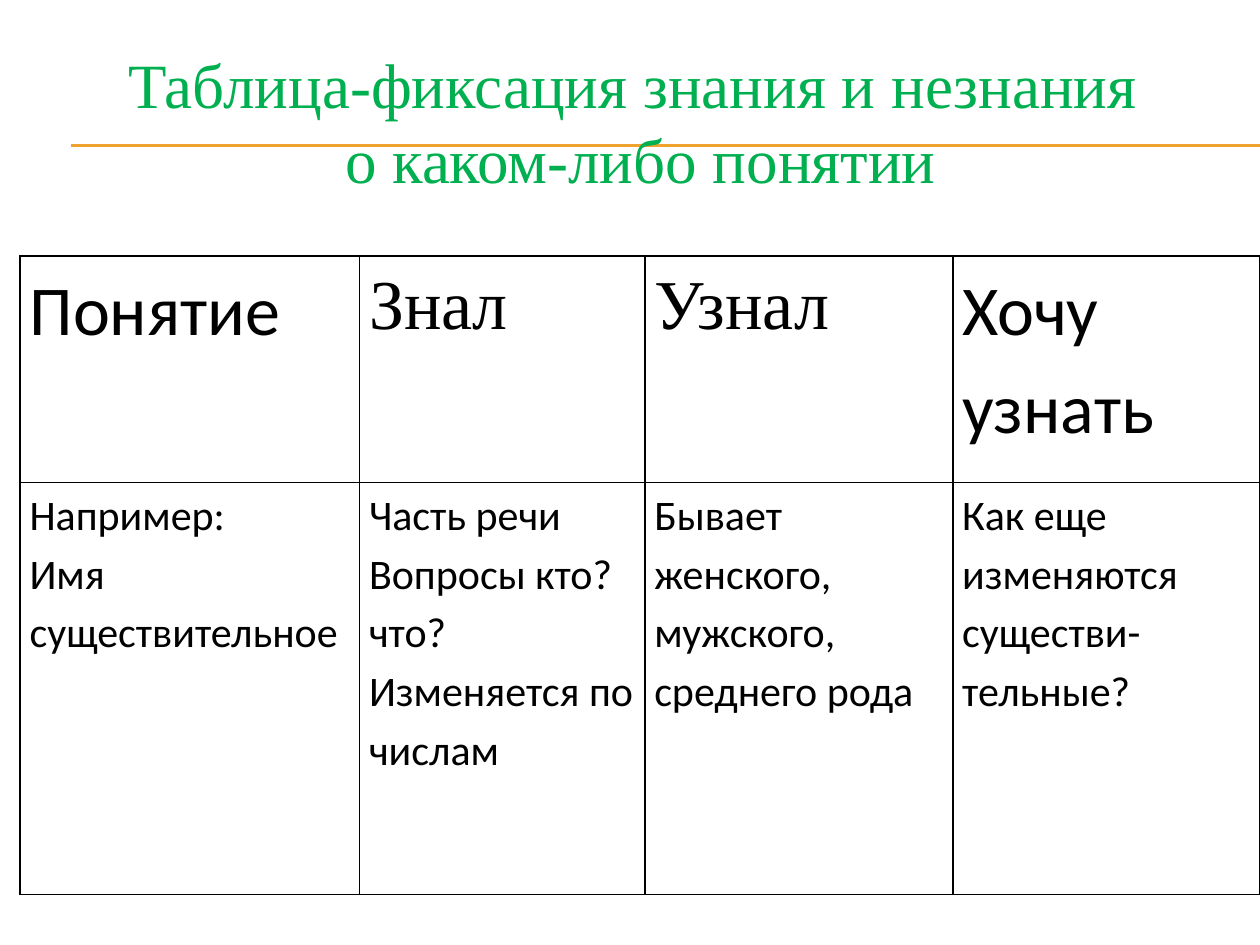
from pptx import Presentation
from pptx.util import Pt
from pptx.dml.color import RGBColor
from pptx.enum.shapes import MSO_CONNECTOR as Conn
from pptx.enum.text import PP_ALIGN as Align, MSO_ANCHOR as Anchor, MSO_AUTO_SIZE as Fit
from pptx.oxml import parse_xml
from pptx.oxml.ns import nsdecls
from lxml import etree

SERIF, SANS = "Times New Roman", "Calibri"


def color(code):
    return RGBColor.from_string(code)


def add_run(para, text, font, size, code):
    run = para.add_run()
    run.text = text
    run.font.name = font
    run.font.size = Pt(size)
    run.font.color.rgb = color(code)


deck = Presentation()
deck.slide_width, deck.slide_height = Pt(720), Pt(540)
slide = deck.slides.add_slide(deck.slide_layouts[5])
slide.background.fill.solid()
slide.background.fill.fore_color.rgb = color("FFFFFF")

# Title
title = slide.shapes.title
title.left, title.top, title.width, title.height = Pt(24), Pt(36), Pt(684), Pt(66)
frame = title.text_frame
frame.word_wrap = True
frame.auto_size = Fit.NONE
frame.vertical_anchor = Anchor.MIDDLE
para = frame.paragraphs[0]
para.alignment = Align.CENTER
add_run(para, "Таблица-фиксация знания и незнания ", SERIF, 36, "00B050")
para.add_line_break()
add_run(para, "о каком-либо понятии", SERIF, 36, "00B050")

# Double rule behind the title
for y in (82.8, 83.4):
    rule = slide.shapes.add_connector(Conn.STRAIGHT, Pt(40.5), Pt(y), Pt(720), Pt(y))
    rule.line.color.rgb = color("F0A22E")
    rule.line.width = Pt(0.75)
    etree.SubElement(rule.element.spPr, "{http://schemas.openxmlformats.org/drawingml/2006/main}effectLst")
    title.element.addprevious(rule.element)

# Table: each cell is font, size, space before, paragraphs
rows = [
    [
        (SANS, 40, 12, ["Понятие"]),
        (SERIF, 40, 0, ["Знал"]),
        (SERIF, 40, 0, ["Узнал"]),
        (SANS, 40, 12, ["Хочу узнать"]),
    ],
    [
        (SANS, 24, 0, ["Например:", "Имя существительное"]),
        (SANS, 24, 0, ["Часть речи", "Вопросы кто? что?", "Изменяется по числам"]),
        (SANS, 24, 0, ["Бывает женского, мужского, среднего рода"]),
        (SANS, 24, 0, ["Как еще изменяются существи-", "тельные?"]),
    ],
]
widths, heights = [194, 163, 176, 175.5], [129.6, 235.4]
grid = slide.shapes.add_table(2, 4, Pt(11.5), Pt(146.2), Pt(sum(widths)), Pt(sum(heights))).table
grid.first_row = grid.horz_banding = False
for col, width in zip(grid.columns, widths):
    col.width = Pt(width)
for row, height in zip(grid.rows, heights):
    row.height = Pt(height)

for r, row in enumerate(rows):
    for c, (font, size, before, texts) in enumerate(row):
        cell = grid.cell(r, c)
        cell.margin_left = cell.margin_right = Pt(5.4)
        cell.margin_top = cell.margin_bottom = Pt(0)
        cell.vertical_anchor = Anchor.TOP
        cell.fill.background()
        for i, text in enumerate(texts):
            para = cell.text_frame.add_paragraph() if i else cell.text_frame.paragraphs[0]
            para.line_spacing = 1.15
            para.space_before = Pt(before)
            add_run(para, text, font, size, "000000")
        # Black borders go ahead of the fill
        props = cell._tc.get_or_add_tcPr()
        for i, side in enumerate("LRTB"):
            props.insert(i, parse_xml(
                f'<a:ln{side} {nsdecls("a")} w="{Pt(1)}"><a:solidFill>'
                f'<a:srgbClr val="000000"/></a:solidFill></a:ln{side}>'))

deck.save("out.pptx")
